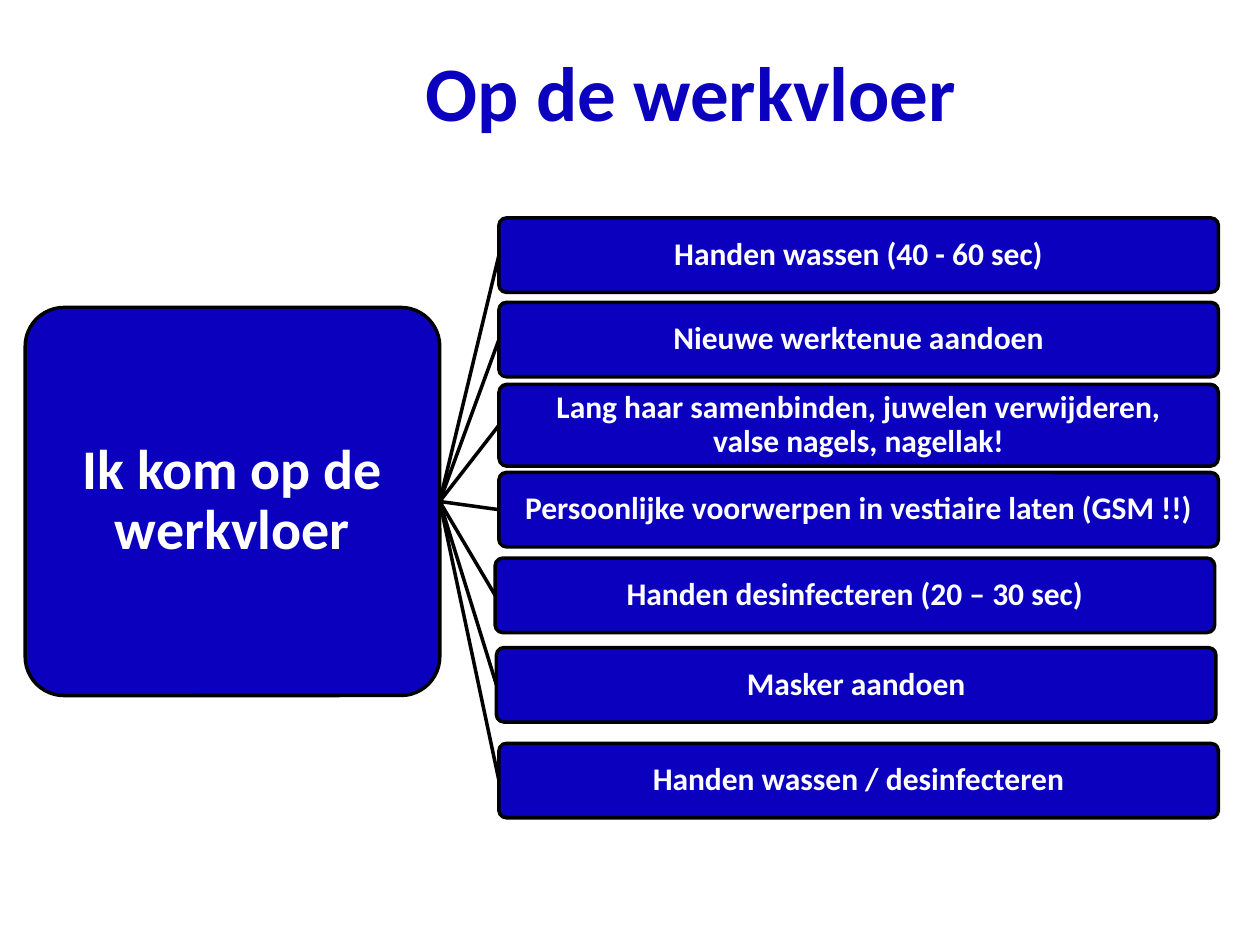
from lxml.etree import SubElement
from pptx import Presentation
from pptx.dml.color import RGBColor
from pptx.enum.shapes import MSO_CONNECTOR, MSO_SHAPE
from pptx.enum.text import MSO_ANCHOR, PP_ALIGN
from pptx.oxml.ns import qn
from pptx.util import Inches, Pt

BLUE = RGBColor(0x0A, 0x00, 0xBE)
BLACK = RGBColor(0, 0, 0)
WHITE = RGBColor(255, 255, 255)
FONT = "Calibri"
RIGHT_SIDE, LEFT_SIDE = 3, 1

TITLE = "Op de werkvloer"
START = "Ik kom op de werkvloer"
STEP_LEFT, STEP_WIDTH, STEP_HEIGHT = 3.96, 5.71, 0.59
# text, left, top, height: the steps are spaced by hand
STEPS = [
    ("Handen wassen (40 - 60 sec)", STEP_LEFT, 1.73, STEP_HEIGHT),
    ("Nieuwe werktenue aandoen", STEP_LEFT, 2.4, STEP_HEIGHT),
    ("Lang haar samenbinden, juwelen verwijderen,\vvalse nagels, nagellak!",
     STEP_LEFT, 3.05, 0.65),
    ("Persoonlijke voorwerpen in vestiaire laten (GSM !!)",
     STEP_LEFT, 3.75, STEP_HEIGHT),
    ("Handen desinfecteren (20 – 30 sec)", 3.93, 4.43, STEP_HEIGHT),
    ("Masker aandoen", 3.94, 5.14, STEP_HEIGHT),
    ("Handen wassen / desinfecteren", STEP_LEFT, 5.9, STEP_HEIGHT),
]


def write(frame, text, size, color):
    frame.word_wrap = True
    frame.vertical_anchor = MSO_ANCHOR.MIDDLE
    para = frame.paragraphs[0]
    para.text = text
    para.alignment = PP_ALIGN.CENTER
    para.font.name = FONT
    para.font.size = Pt(size)
    para.font.bold = True
    para.font.color.rgb = color
    return para


def add_box(slide, text, left, top, width, height, size, inset):
    box = slide.shapes.add_shape(
        MSO_SHAPE.ROUNDED_RECTANGLE,
        Inches(left), Inches(top), Inches(width), Inches(height))
    box.adjustments[0] = 0.1
    box.shadow.inherit = False
    box.fill.solid()
    box.fill.fore_color.rgb = BLUE
    box.line.color.rgb = BLACK
    box.line.width = Pt(2)
    frame = box.text_frame
    frame.margin_left = frame.margin_right = Inches(inset)
    frame.margin_top = frame.margin_bottom = Inches(inset)
    write(frame, text, size, WHITE).line_spacing = 0.9
    return box


def join(slide, start, step):
    line = slide.shapes.add_connector(MSO_CONNECTOR.STRAIGHT, 0, 0, 0, 0)
    line.begin_connect(start, RIGHT_SIDE)
    line.end_connect(step, LEFT_SIDE)
    line.line.color.rgb = BLACK
    line.line.width = Pt(2)
    SubElement(line._element.spPr, qn("a:effectLst"))


def main():
    deck = Presentation()
    deck.slide_width, deck.slide_height = Inches(10), Inches(7.5)
    slide = deck.slides.add_slide(deck.slide_layouts[5])

    title = slide.shapes.title
    title.left, title.top = Inches(1.3), Inches(0.29)
    title.width, title.height = Inches(8.37), Inches(0.86)
    write(title.text_frame, TITLE, 44, BLUE)

    start = add_box(slide, START, 0.2, 2.44, 3.29, 3.08, 32, 0.02)
    for text, left, top, height in STEPS:
        step = add_box(slide, text, left, top, STEP_WIDTH, height, 18, 0.01)
        join(slide, start, step)

    deck.save("out.pptx")


if __name__ == "__main__":
    main()
